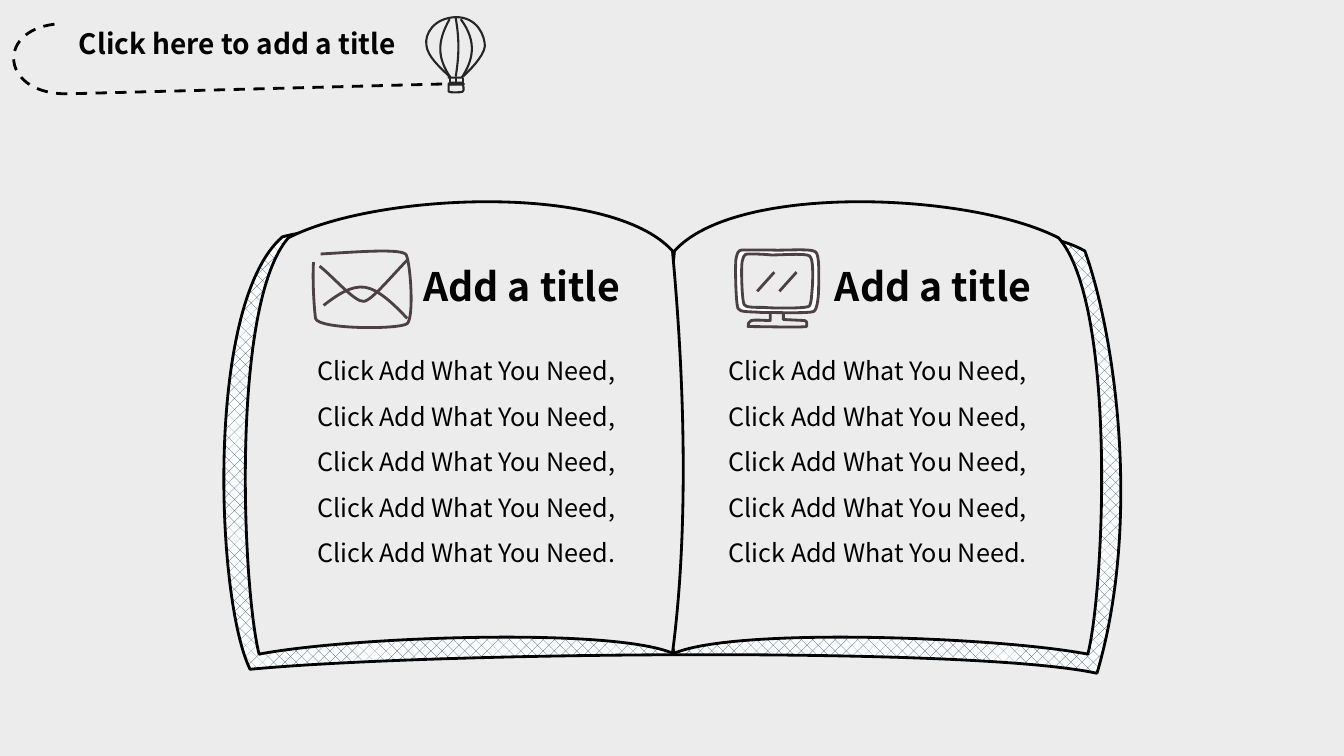
import pptx
import pptx.dml.color
import pptx.enum.dml
import pptx.enum.shapes
import pptx.enum.text
import pptx.oxml
import pptx.oxml.ns
import pptx.util
from lxml import etree

Inches = pptx.util.Inches
qn = pptx.oxml.ns.qn
COLORS = {"paper": "ECECEC", "ink": "000000", "balloon": "262626",
          "icon": "4C4045", "hatch": "1F4E79", "white": "FFFFFF"}
FONT = "Noto Sans CJK SC"
BODY = " ".join(["Click Add What You Need,"] * 4 + ["Click Add What You Need."])


def rgb(name):
    return pptx.dml.color.RGBColor.from_string(COLORS[name])


def set_line(sp, color, width):
    sp.line.color.rgb = rgb(color)
    sp.line.width = pptx.util.Pt(width)


def pairs(seg):
    return list(zip(seg[::2], seg[1::2]))


def sample(contour):
    """Points along a contour of lines (2 numbers) and Bezier curves (6)."""
    pts = [contour[0]]
    for seg in contour[1:]:
        ctrl = [pts[-1]] + pairs(seg)
        if len(ctrl) == 2:
            pts.append(ctrl[1])
            continue
        for t in (i / 20 for i in range(1, 21)):
            weights = ((1 - t) ** 3, 3 * t * (1 - t) ** 2, 3 * t * t * (1 - t), t ** 3)
            pts.append(tuple(sum(w * c[k] for w, c in zip(weights, ctrl)) for k in (0, 1)))
    return pts


def add_outline(shapes, x, y, contours, color, width=2, fill=None, close=False, flip=1):
    """Draw contours relative to (x, y); flip=-1 mirrors them left to right."""
    contours = [[tuple(v * (1 if i % 2 else flip) for i, v in enumerate(seg))
                 for seg in contour] for contour in contours]
    xs, ys = zip(*[pt for contour in contours for pt in sample(contour)])
    left, top = min(xs), min(ys)
    builder = shapes.build_freeform(Inches(x + left), Inches(y + top))
    builder.add_line_segments([(Inches(x + max(xs)), Inches(y + max(ys)))], close=False)
    sp = builder.convert_to_shape()
    # Put the curves into the box just made
    outline = next(sp._element.iter(qn("a:path")))
    for child in list(outline):
        outline.remove(child)
    for contour in contours:
        for i, seg in enumerate(contour):
            tag = "a:moveTo" if i == 0 else "a:lnTo" if len(seg) == 2 else "a:cubicBezTo"
            step = etree.SubElement(outline, qn(tag))
            for px, py in pairs(seg):
                etree.SubElement(step, qn("a:pt"), x=str(int(Inches(px - left))),
                                 y=str(int(Inches(py - top))))
        if close:
            etree.SubElement(outline, qn("a:close"))
    sp.shadow.inherit = False
    if fill:
        sp.fill.solid()
        sp.fill.fore_color.rgb = rgb(fill)
    else:
        sp.fill.background()
    set_line(sp, color, width)
    return sp


def add_stroke(shapes, x1, y1, x2, y2, color, width):
    ln = shapes.add_connector(pptx.enum.shapes.MSO_CONNECTOR.STRAIGHT,
                              Inches(x1), Inches(y1), Inches(x2), Inches(y2))
    set_line(ln, color, width)
    etree.SubElement(ln._element.spPr, qn("a:effectLst"))


def write_text(sp, text, size, bold=False, wrap=False, spacing=1.0):
    tf = sp.text_frame
    tf.text = text
    tf.word_wrap = wrap
    tf.auto_size = pptx.enum.text.MSO_AUTO_SIZE.SHAPE_TO_FIT_TEXT
    tf.vertical_anchor = pptx.enum.text.MSO_ANCHOR.TOP
    p = tf.paragraphs[0]
    p.alignment = pptx.enum.text.PP_ALIGN.CENTER
    p.line_spacing = spacing
    p.space_before = pptx.util.Pt(0)
    font = p.runs[0].font
    font.name, font.size, font.bold = FONT, pptx.util.Pt(size), bold
    font.color.rgb = rgb("ink")


def add_text(shapes, x, y, w, h, text, size, **style):
    sp = shapes.add_textbox(Inches(x), Inches(y), Inches(w), Inches(h))
    write_text(sp, text, size, **style)


def add_balloon(shapes, x, y):
    # Envelope and basket
    add_outline(shapes, x, y, [[(.23, .59), (.11, .48, .01, .38, 0, .28),
                (-.02, .17, .07, .01, .29, 0), (.51, 0, .58, .19, .58, .29),
                (.57, .39, .41, .55, .35, .6), (.22, .6), (.23, .59)]],
                "balloon", 1.5, close=True)
    add_outline(shapes, x, y, [[(.22, .67), (.23, .66, .36, .66, .36, .66),
                (.36, .66, .38, .73, .36, .74), (.34, .75, .23, .75, .22, .74),
                (.22, .72, .22, .67, .22, .67)]], "balloon", 1.5, close=True)
    # Ropes and rim
    for rope in (.23, .29, .36):
        add_stroke(shapes, x + rope, y + .66, x + rope, y + .6, "balloon", 1.5)
    add_outline(shapes, x, y, [[(.24, .65), (.26, .65, .33, .65, .35, .65),
                (.37, .66, .38, .67, .36, .67), (.34, .67, .25, .67, .23, .67),
                (.21, .67, .22, .65, .24, .65)]], "balloon", 1.5, "white", True)
    # Seams
    for seam in ([(.24, .6), (.11, .41, .1, .25, .23, .02)],
                 [(.29, .59), (.32, .4, .33, .24, .29, .01)],
                 [(.35, .6), (.46, .43, .51, .25, .34, .02)]):
        add_outline(shapes, x, y, [seam], "balloon", 1.5)


def add_header(s, x, y):
    trail = add_outline(s.shapes, x, y, [[(.4, .07), (-.19, .14, -.13, .78, .55, .76),
                                         (4.38, .66)]], "ink")
    trail.line.dash_style = pptx.enum.dml.MSO_LINE.DASH
    add_balloon(s.shapes.add_group_shape().shapes, x + 4.09, y)
    title = s.shapes.title
    title.left, title.top = Inches(x + .48), Inches(y + .04)
    title.width, title.height = Inches(3.47), Inches(.44)
    write_text(title, "Click here to add a title", 20, bold=True)


def add_book(shapes, spine, top):
    # Hatched cover
    cover = add_outline(shapes, spine, top, [[
        (4.08, .49), (4.37, 1.29, 4.65, 3.15, 4.2, 4.68),
        (2.97, 4.41, -2.41, 4.47, -4.2, 4.64), (-4.54, 3.95, -4.65, 1.02, -3.88, .35),
        (-2.74, .04, -1.31, .77, .02, .79), (1.34, .81, 3.2, -.01, 4.08, .49)]],
        "ink", close=True)
    cover.fill.patterned()
    cover.fill.pattern = pptx.enum.dml.MSO_PATTERN.PERCENT_25
    cover.fill.fore_color.rgb = rgb("hatch")
    cover.fill.back_color.rgb = rgb("white")
    # Right page, then its mirrored left page with a flatter spine
    for flip, bend in ((1, (-.37, 3.4)), (-1, (-.19, 2.96))):
        add_outline(shapes, spine, top, [[
            (.01, .49), (-.06, 1.25, *bend, .01, 4.48), (.63, 4.22, 3.23, 4.32, 4.11, 4.49),
            (4.28, 3.8, 4.39, 1.01, 3.82, .36), (2.95, -.09, .62, -.19, .01, .49)]],
            "ink", fill="paper", close=True, flip=flip)


def add_envelope(shapes, x, y):
    for fold in ([(.26, .06), (.61, .04, 1.08, 0, 1.11, .07), (1.15, .15, 1.19, .68, 1.12, .75),
                  (1.05, .81, .24, .81, .21, .7), (.19, .54, .18, .29, .19, .14)],
                 [(.29, .57), (.42, .47, .56, .37, .7, .39), (.83, .41, .98, .55, 1.12, .7)],
                 [(.25, .18), (.4, .3, .6, .54, .69, .53), (.77, .52, .98, .26, 1.12, .12)]):
        add_outline(shapes, x, y, [fold], "icon")


def add_monitor(shapes, x, y):
    # Frame with an open screen
    screen = [(.43, .06), (.42, .06, .42, .06, .41, .06), (.38, .06, .37, .1, .36, .14),
              (.35, .22, .36, .52, .38, .56), (.39, .59, .47, .59, .58, .59),
              (.68, .6, .99, .6, 1.02, .58), (1.05, .57, 1.05, .45, 1.06, .36),
              (1.06, .28, 1.07, .11, 1.03, .08), (1, .05, .75, .07, .65, .07),
              (.56, .06, .48, .06, .43, .06)]
    frame = [(.38, .02), (.44, .02, .54, .02, .64, .02), (.76, .03, 1.05, 0, 1.09, .04),
             (1.13, .07, 1.12, .27, 1.12, .37), (1.12, .47, 1.11, .61, 1.07, .63),
             (1.04, .65, .68, .64, .55, .64), (.43, .63, .34, .64, .32, .6),
             (.3, .56, .29, .2, .3, .11), (.31, .06, .32, .02, .36, .02),
             (.37, .02, .38, .02, .38, .02)]
    add_outline(shapes, x, y, [screen, frame], "icon", fill="white", close=True)
    # Stand and glare
    add_outline(shapes, x, y, [[(.64, .64), (.64, .72), (.58, .72, .49, .71, .45, .72),
                (.42, .73, .42, .76, .42, .78), (.61, .78, .91, .79, 1, .78),
                (.99, .76, 1.02, .73, .98, .72), (.77, .71), (.77, .65)]], "icon")
    for glare in (.51, .73):
        add_stroke(shapes, x + glare, y + .43, x + glare + .17, y + .24, "icon", 2)


def add_page_text(shapes, x, y, add_icon):
    add_icon(shapes.add_group_shape().shapes, x, y)
    add_text(shapes, x + 1.12, y + .09, 2.27, .57, "Add a title", 28, bold=True)
    add_text(shapes, x, y + .87, 3.41, 2.32, BODY, 18, wrap=True, spacing=1.5)


def main():
    prs = pptx.Presentation()
    prs.slide_width, prs.slide_height = Inches(13.33), Inches(7.5)
    s = prs.slides.add_slide(prs.slide_layouts[5])
    s.background.fill.solid()
    s.background.fill.fore_color.rgb = rgb("paper")
    add_header(s, .14, .17)
    add_book(s.shapes.add_group_shape().shapes, 6.68, 2)
    for x, add_icon in ((2.92, add_envelope), (7, add_monitor)):
        add_page_text(s.shapes, x, 2.46, add_icon)
    prs.save("out.pptx")


if __name__ == "__main__":
    main()
